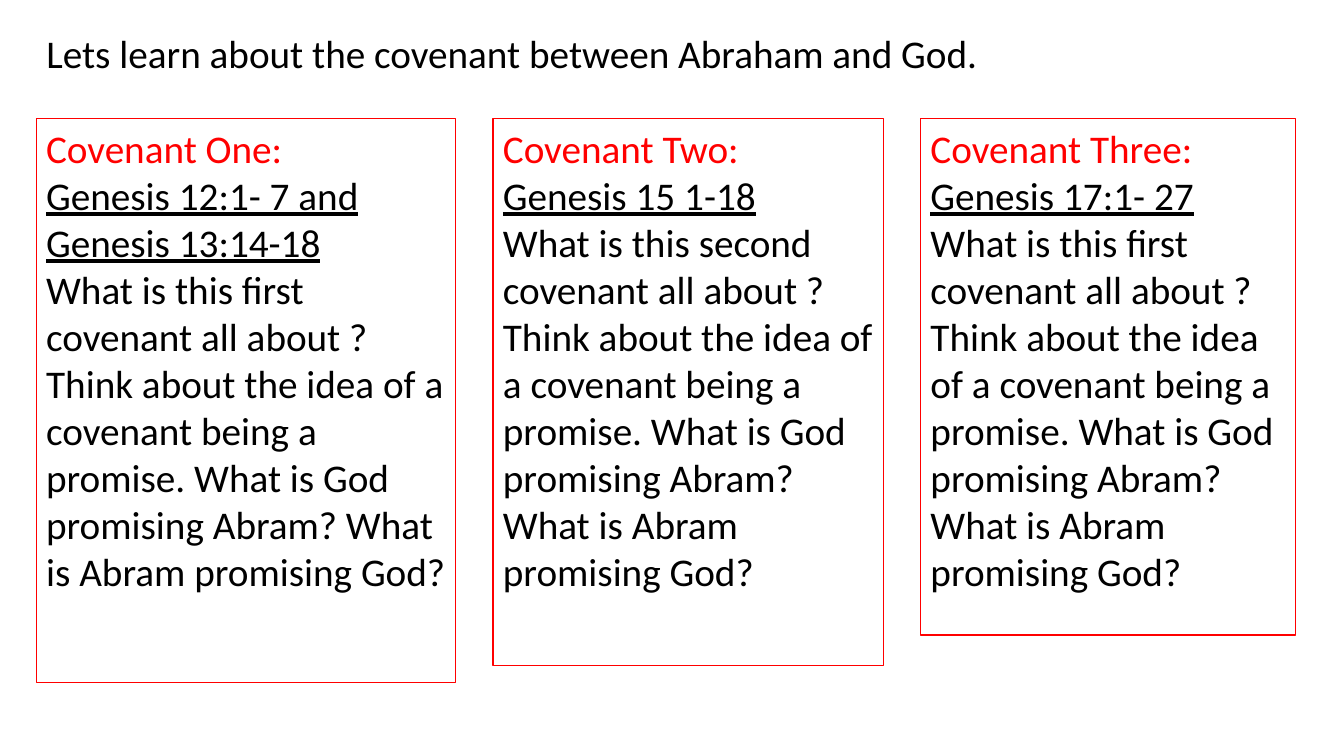
import pptx
import pptx.dml.color
import pptx.enum.shapes
import pptx.enum.text
import pptx.util
from pptx.util import Inches

RED = "FF0000"
BLACK = "000000"
TOP = 1.18
QUESTION = "What is this {} covenant all about ?"
THINK = (
    "Think about the idea of a covenant being a promise. "
    "What is God promising Abram? What is Abram promising God?"
)

# heading, passage, ordinal, left, width, height
COVENANTS = [
    ("Covenant One:", "Genesis 12:1- 7 and Genesis 13:14-18", "first", 0.36, 4.16, 5.59),
    ("Covenant Two:", "Genesis 15 1-18", "second", 4.89, 3.87, 5.42),
    ("Covenant Three:", "Genesis 17:1- 27", "first", 9.13, 3.72, 5.12),
]


def rgb(value):
    return pptx.dml.color.RGBColor.from_string(value)


def prepare_frame(shape):
    """Wrap the text of a shape from its top left, at a fixed size."""
    frame = shape.text_frame
    frame.word_wrap = True
    frame.auto_size = pptx.enum.text.MSO_AUTO_SIZE.NONE
    frame.vertical_anchor = pptx.enum.text.MSO_ANCHOR.TOP
    return frame


def write(para, text, color=BLACK, size=28, font="Calibri", underline=False):
    para.alignment = pptx.enum.text.PP_ALIGN.LEFT
    span = para.add_run()
    span.text = text
    span.font.name = font
    span.font.size = pptx.util.Pt(size)
    span.font.color.rgb = rgb(color)
    span.font.underline = underline


def set_title(page, text):
    title = page.shapes.title
    title.left, title.top = Inches(0.36), Inches(0.24)
    title.width, title.height = Inches(12.65), Inches(0.57)
    write(prepare_frame(title).paragraphs[0], text)


def add_covenant(page, heading, passage, ordinal, left, width, height):
    box = page.shapes.add_shape(
        pptx.enum.shapes.MSO_SHAPE.RECTANGLE,
        Inches(left), Inches(TOP), Inches(width), Inches(height),
    )
    box.shadow.inherit = False
    box.fill.background()
    box.line.color.rgb = rgb(RED)
    box.line.width = pptx.util.Pt(0.75)
    frame = prepare_frame(box)
    write(frame.paragraphs[0], heading, color=RED)
    write(frame.add_paragraph(), passage, underline=True)
    write(frame.add_paragraph(), QUESTION.format(ordinal))
    write(frame.add_paragraph(), THINK)


def main():
    deck = pptx.Presentation()
    deck.slide_width, deck.slide_height = Inches(13.33), Inches(7.5)
    page = deck.slides.add_slide(deck.slide_layouts.get_by_name("Title Only"))
    set_title(page, "Lets learn about the covenant between Abraham and God.")
    for covenant in COVENANTS:
        add_covenant(page, *covenant)
    deck.save("out.pptx")


if __name__ == "__main__":
    main()
